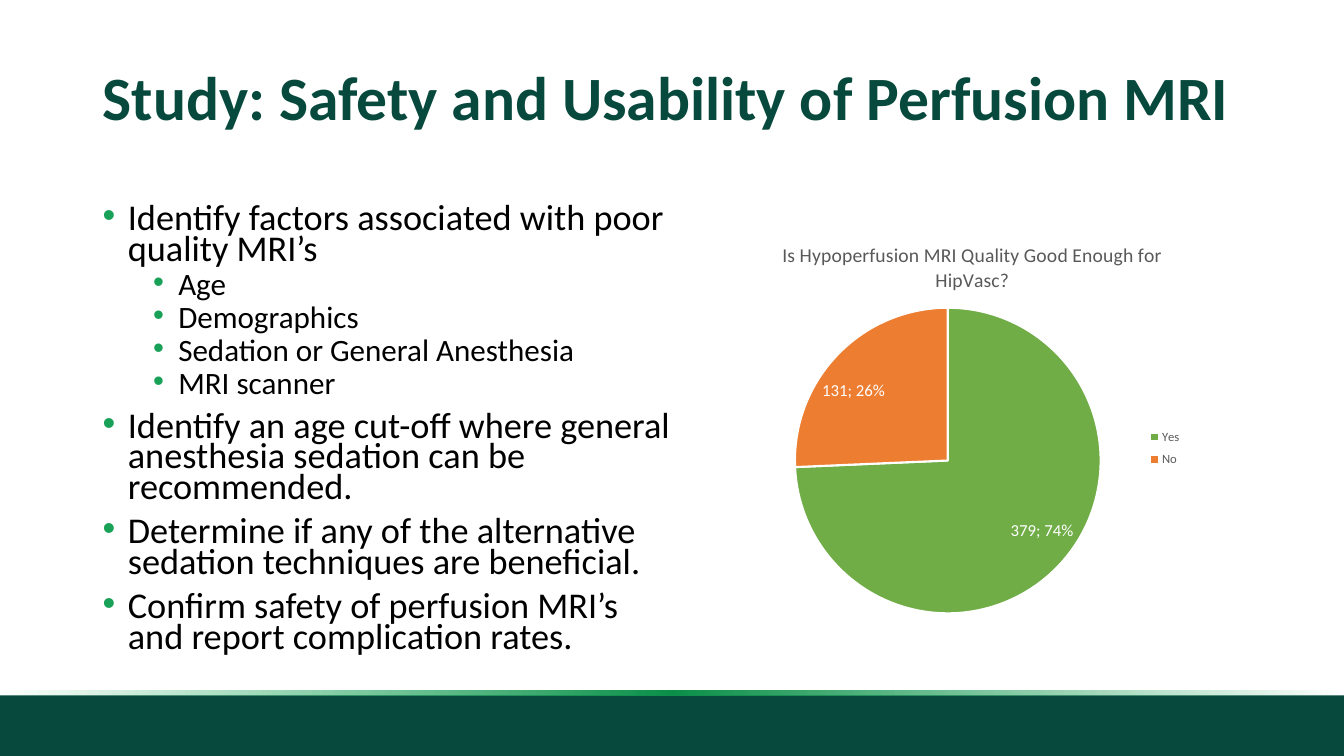
from dataclasses import dataclass

from lxml.etree import SubElement
from pptx import Presentation
from pptx.chart.chart import Chart
from pptx.chart.data import CategoryChartData
from pptx.dml.color import RGBColor
from pptx.enum.chart import XL_CHART_TYPE as ChartType
from pptx.enum.chart import XL_LABEL_POSITION as LabelPosition
from pptx.enum.chart import XL_LEGEND_POSITION as LegendPosition
from pptx.enum.shapes import MSO_SHAPE as ShapeKind
from pptx.enum.text import MSO_ANCHOR as Anchor
from pptx.enum.text import MSO_AUTO_SIZE as AutoSize
from pptx.enum.text import PP_ALIGN as Align
from pptx.oxml import parse_xml
from pptx.oxml.ns import nsdecls, qn
from pptx.shapes.autoshape import Shape
from pptx.slide import Slide
from pptx.text.text import Font
from pptx.util import Inches, Pt


@dataclass(frozen=True)
class Theme:
    font: str = "Calibri"
    dark_green: str = "07493C"
    bullet_green: str = "19A157"
    black: str = "000000"
    white: str = "FFFFFF"
    gray: str = "595959"
    title_size: float = 44
    body_sizes: tuple[float, float] = (25.9, 22.2)
    chart_title_size: float = 14
    label_size: float = 12
    legend_size: float = 9


@dataclass(frozen=True)
class Box:
    left: float
    top: float
    width: float
    height: float

    def lengths(self) -> tuple[int, int, int, int]:
        return (Inches(self.left), Inches(self.top),
                Inches(self.width), Inches(self.height))


@dataclass(frozen=True)
class Bullet:
    text: str
    level: int = 0


@dataclass(frozen=True)
class Answer:
    name: str
    count: int
    color: str


THEME = Theme()
TITLE = "Study: Safety and Usability of Perfusion MRI"
BULLETS = [
    Bullet("Identify factors associated with poor quality MRI’s"),
    Bullet("Age", 1),
    Bullet("Demographics", 1),
    Bullet("Sedation or General Anesthesia", 1),
    Bullet("MRI scanner", 1),
    Bullet("Identify an age cut-off where general anesthesia sedation can be recommended."),
    Bullet("Determine if any of the alternative sedation techniques are beneficial."),
    Bullet("Confirm safety of perfusion MRI’s and report complication rates."),
]
CHART_TITLE = "Is Hypoperfusion MRI Quality Good Enough for HipVasc?"
ANSWERS = [Answer("Yes", 379, "70AD47"), Answer("No", 131, "ED7D31")]


def style_font(font: Font, size: float, color: str, bold: bool = False) -> None:
    font.name = THEME.font
    font.size = Pt(size)
    font.bold = bold
    font.color.rgb = RGBColor.from_string(color)


def add_title(slide: Slide, box: Box) -> None:
    title = slide.shapes.title
    title.left, title.top, title.width, title.height = box.lengths()
    frame = title.text_frame
    frame.text = TITLE
    frame.word_wrap = True
    frame.auto_size = AutoSize.NONE
    frame.vertical_anchor = Anchor.MIDDLE
    paragraph = frame.paragraphs[0]
    paragraph.alignment = Align.LEFT
    paragraph.line_spacing = 0.9
    style_font(paragraph.font, THEME.title_size, THEME.dark_green, bold=True)


def add_bullets(slide: Slide, box: Box) -> None:
    frame = slide.shapes.add_textbox(*box.lengths()).text_frame
    frame.word_wrap = True
    for index, bullet in enumerate(BULLETS):
        paragraph = frame.add_paragraph() if index else frame.paragraphs[0]
        paragraph.text = bullet.text
        paragraph.level = bullet.level
        paragraph.line_spacing = 0.7
        if index:
            paragraph.space_before = Pt(5 if bullet.level else 10)
        properties = paragraph._p.get_or_add_pPr()
        properties.set("marL", str(Inches(0.25 + 0.5 * bullet.level)))
        properties.set("indent", str(Inches(-0.25)))
        bullet_color = SubElement(properties, qn("a:buClr"))
        SubElement(bullet_color, qn("a:srgbClr"), val=THEME.bullet_green)
        SubElement(properties, qn("a:buFont"), typeface="Arial")
        SubElement(properties, qn("a:buChar"), char="•")
        style_font(paragraph.font, THEME.body_sizes[bullet.level], THEME.black)


def add_bar(slide: Slide, box: Box) -> Shape:
    bar = slide.shapes.add_shape(ShapeKind.RECTANGLE, *box.lengths())
    bar.shadow.inherit = False
    bar.line.fill.background()
    bar.fill.solid()
    bar.fill.fore_color.rgb = RGBColor.from_string(THEME.dark_green)
    return bar


def fade_ends(bar: Shape) -> None:
    """Fill the bar with a green that is clear at both ends."""
    gradient = parse_xml(
        f'<a:gradFill {nsdecls("a")} rotWithShape="1"><a:gsLst>'
        '<a:gs pos="0"><a:srgbClr val="0D9D4F"><a:alpha val="0"/></a:srgbClr></a:gs>'
        '<a:gs pos="50000"><a:srgbClr val="0C9049"/></a:gs>'
        '<a:gs pos="100000"><a:srgbClr val="0FAB56"><a:alpha val="0"/></a:srgbClr></a:gs>'
        '</a:gsLst><a:lin ang="10800000" scaled="0"/></a:gradFill>')
    properties = bar._element.spPr
    properties.replace(properties.find(qn("a:solidFill")), gradient)


def place_part(chart: Chart, tag: str, **fractions: float) -> None:
    """Fix a chart part at fractions (x, y, w, h) of the chart area."""
    part = chart._chartSpace.chart.find(qn(tag))
    layout = part.find(qn("c:layout"))
    if layout is None:
        layout = parse_xml(f'<c:layout {nsdecls("c")}/>')
        before = {"c:title": "c:tx", "c:legend": "c:legendPos"}.get(tag)
        part.insert(part.index(part.find(qn(before))) + 1 if before else 0, layout)
    manual = SubElement(layout, qn("c:manualLayout"))
    if tag == "c:plotArea":
        SubElement(manual, qn("c:layoutTarget"), val="inner")
    for axis in "xy":
        SubElement(manual, qn(f"c:{axis}Mode"), val="edge")
    for key, value in fractions.items():
        SubElement(manual, qn(f"c:{key}"), val=str(value))


def add_pie(slide: Slide, box: Box) -> None:
    data = CategoryChartData()
    data.categories = [answer.name for answer in ANSWERS]
    data.add_series("Series 1", [answer.count for answer in ANSWERS])
    chart = slide.shapes.add_chart(ChartType.PIE, *box.lengths(), data).chart
    style_font(chart.font, 10, THEME.black)

    chart.has_title = True
    chart.chart_title.include_in_layout = False
    heading = chart.chart_title.text_frame
    heading.text = CHART_TITLE
    style_font(heading.paragraphs[0].font, THEME.chart_title_size, THEME.gray)

    chart.has_legend = True
    chart.legend.position = LegendPosition.RIGHT
    chart.legend.include_in_layout = False
    style_font(chart.legend.font, THEME.legend_size, THEME.gray)

    plot = chart.plots[0]
    plot.vary_by_categories = True
    series = plot.series[0]
    for index, answer in enumerate(ANSWERS):
        wedge = series.points[index].format
        wedge.fill.solid()
        wedge.fill.fore_color.rgb = RGBColor.from_string(answer.color)
        wedge.line.color.rgb = RGBColor.from_string(THEME.white)
        wedge.line.width = Pt(1.5)

    labels = series.data_labels
    labels.show_value = True
    labels.show_percentage = True
    labels.position = LabelPosition.BEST_FIT
    style_font(labels.font, THEME.label_size, THEME.white)
    separator = parse_xml(f'<c:separator {nsdecls("c")}>; </c:separator>')
    labels._element.find(qn("c:showBubbleSize")).addnext(separator)

    place_part(chart, "c:title", x=0.14, y=0.05)
    place_part(chart, "c:plotArea", x=0.17, y=0.22, w=0.57, h=0.75)
    place_part(chart, "c:legend", x=0.81, y=0.5, w=0.1, h=0.13)


def main() -> None:
    presentation = Presentation()
    presentation.slide_width = Inches(13.33)
    presentation.slide_height = Inches(7.5)
    slide = presentation.slides.add_slide(presentation.slide_layouts[5])
    add_bar(slide, Box(0, 6.9, 13.33, 0.6))
    fade_ends(add_bar(slide, Box(0, 6.85, 13.33, 0.05)))
    add_title(slide, Box(0.92, 0.4, 11.5, 1.19))
    add_bullets(slide, Box(0.92, 2, 5.86, 4.76))
    add_pie(slide, Box(6.98, 2.16, 5.32, 4.05))
    presentation.save("out.pptx")


if __name__ == "__main__":
    main()
